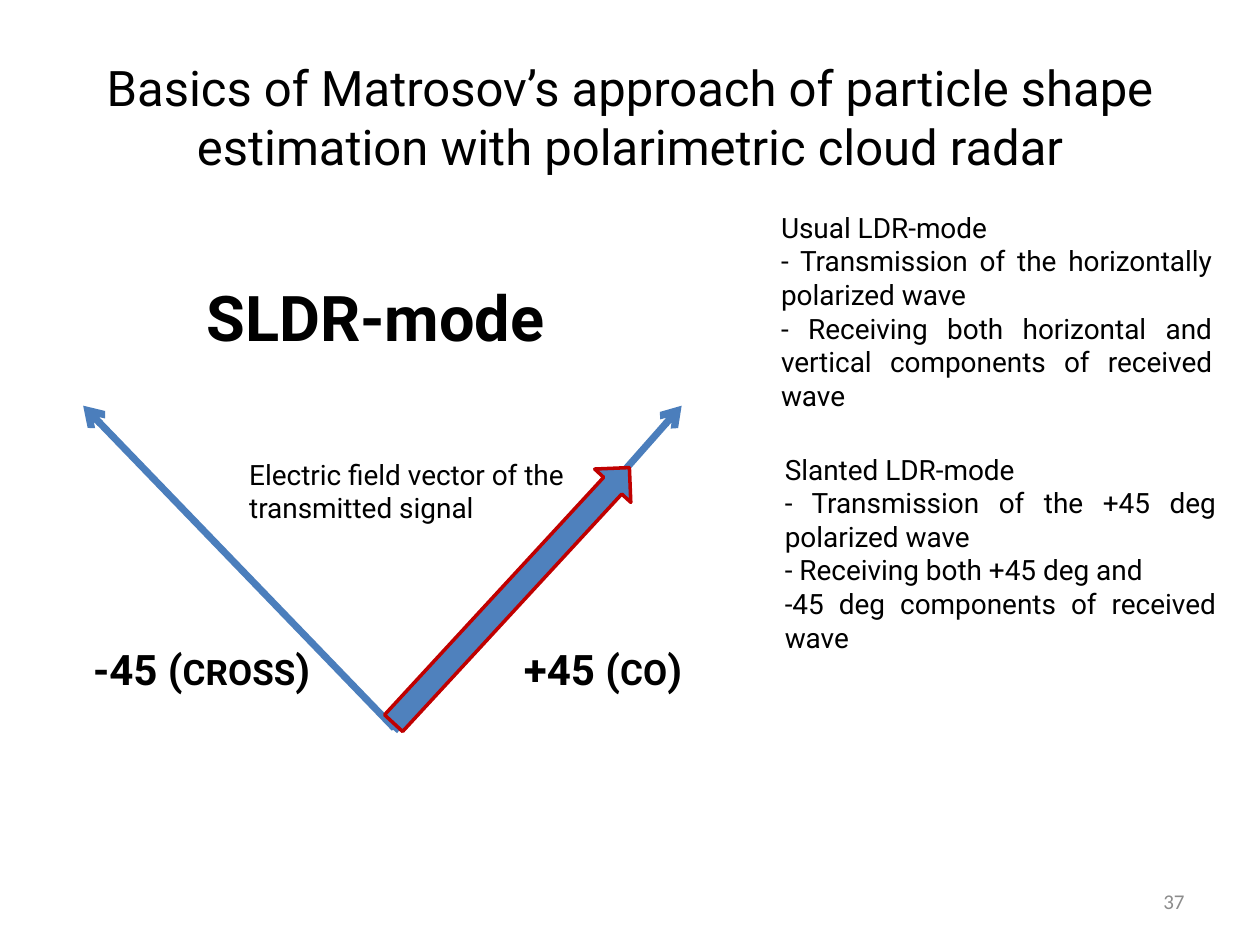
from pptx import Presentation
from pptx.dml.color import RGBColor as Rgb
from pptx.enum.shapes import MSO_CONNECTOR as Conn, MSO_SHAPE as Geo
from pptx.enum.text import MSO_ANCHOR as Anchor, PP_ALIGN as Align
from pptx.oxml.ns import qn
from pptx.util import Inches, Pt
from lxml.etree import SubElement as Sub

HUES = {"ink": "000000", "gray": "8C8C8C", "line": "4B7EBC", "fill": "4F81BD", "edge": "C00000"}


def hue(name):
    """Return the colour of that name."""
    return Rgb.from_string(HUES[name])


def add_text(slide, box, paras, size, align=Align.LEFT, anchor=Anchor.TOP, **font):
    """Add a text box; each paragraph is a string or a list of (text, size) runs."""
    frame = slide.shapes.add_textbox(*map(Inches, box)).text_frame
    frame.word_wrap = True
    frame.vertical_anchor = anchor
    look = {"name": "Roboto", "bold": False, "color": "ink"} | font
    tint = hue(look.pop("color"))
    for i, para in enumerate(paras):
        line = frame.add_paragraph() if i else frame.paragraphs[0]
        line.alignment = align
        for text, pts in [(para, size)] if isinstance(para, str) else para:
            run = line.add_run()
            run.text = text
            for key, value in look.items():
                setattr(run.font, key, value)
            run.font.size = Pt(pts)
            run.font.color.rgb = tint


def add_axis(slide, start, end):
    """Add an axis line with an open arrowhead at its end."""
    axis = slide.shapes.add_connector(Conn.STRAIGHT, *map(Inches, start + end))
    axis.line.color.rgb = hue("line")
    axis.line.width = Pt(4)
    Sub(axis.line._get_or_add_ln(), qn("a:tailEnd"), type="arrow")
    Sub(axis._element.spPr, qn("a:effectLst"))


def add_arrow(slide, box, turn):
    """Add the turned block arrow of the field vector."""
    arrow = slide.shapes.add_shape(Geo.RIGHT_ARROW, *map(Inches, box))
    arrow.rotation = turn
    arrow.shadow.inherit = False
    arrow.fill.solid()
    arrow.fill.fore_color.rgb = hue("fill")
    arrow.line.color.rgb = hue("edge")
    arrow.line.width = Pt(2)


def main():
    """Build and save the slide."""
    deck = Presentation()
    deck.slide_width, deck.slide_height = Inches(10), Inches(7.5)
    slide = deck.slides.add_slide(deck.slide_layouts[6])

    title = "Basics of Matrosov’s approach of particle shape estimation with polarimetric cloud radar"
    add_text(slide, (0.5, 0.3, 9, 1.25), [title], 28, Align.CENTER, Anchor.MIDDLE)

    usual = [
        "Usual LDR-mode",
        "- Transmission of the horizontally polarized wave",
        "- Receiving both horizontal and vertical components of received wave",
    ]
    slant = [
        "Slanted LDR-mode",
        "- Transmission of the +45 deg polarized wave",
        "- Receiving both +45 deg and ",
        "-45 deg components of received wave",
    ]
    for left, top, paras in [(6.1, 1.62, usual), (6.13, 3.54, slant)]:
        add_text(slide, (left, top, 3.62, 1.72), paras, 16, Align.JUSTIFY)

    add_axis(slide, (3.13, 5.78), (0.66, 3.22))
    add_axis(slide, (3.13, 5.8), (5.41, 3.22))
    for left, width, sign, name in [(4.06, 1.57, "+", "CO"), (0.64, 2.05, "-", "CROSS")]:
        runs = [(f"{sign}45 (", 24), (name, 20), (")", 24)]
        add_text(slide, (left, 5.06, width, 0.5), [runs], 24, bold=True)
    add_arrow(slide, (2.68, 4.53, 2.76, 0.39), 312.7)

    add_text(slide, (1.88, 3.58, 2.76, 0.64), ["Electric field vector of the transmitted signal"], 16)
    add_text(slide, (1.54, 2.16, 3.17, 0.71), ["SLDR-mode"], 36, bold=True)
    add_text(slide, (7.17, 6.95, 2.33, 0.4), ["37"], 12, Align.RIGHT, Anchor.MIDDLE,
             name="Calibri", color="gray")
    deck.save("out.pptx")


if __name__ == "__main__":
    main()
